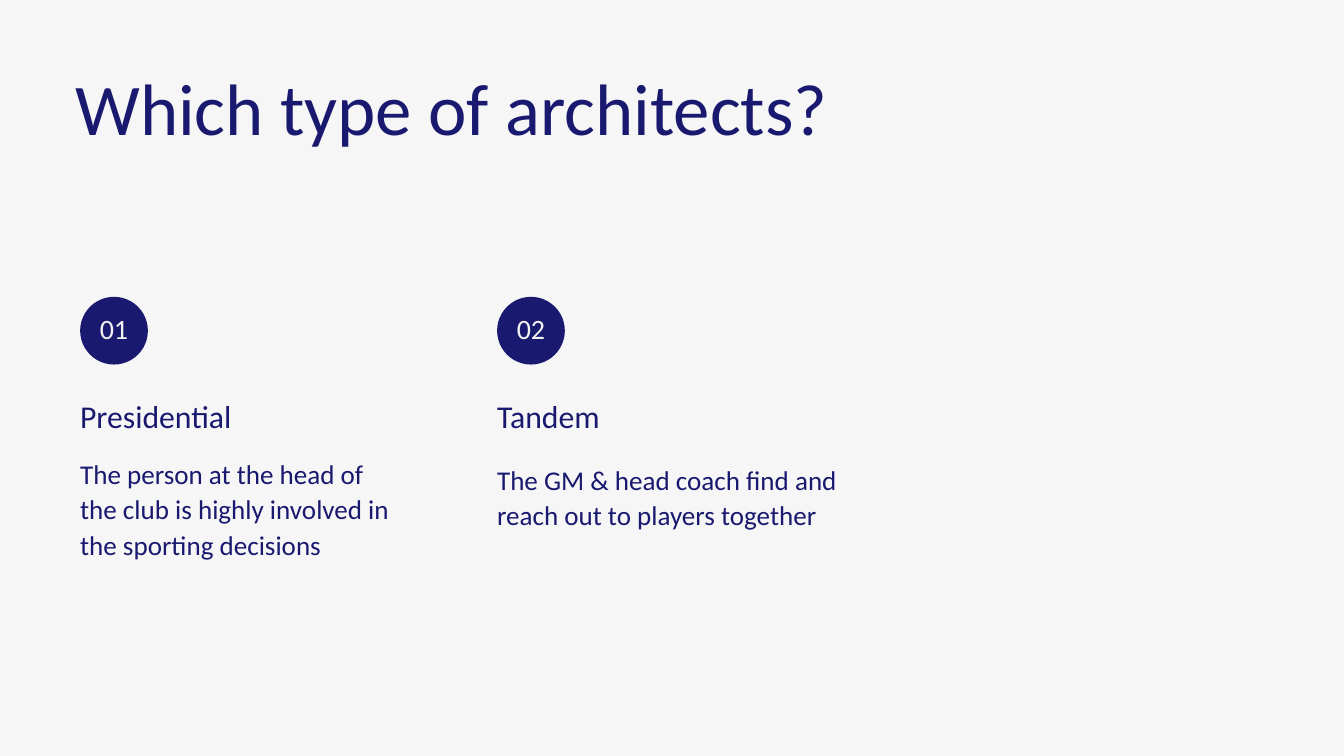
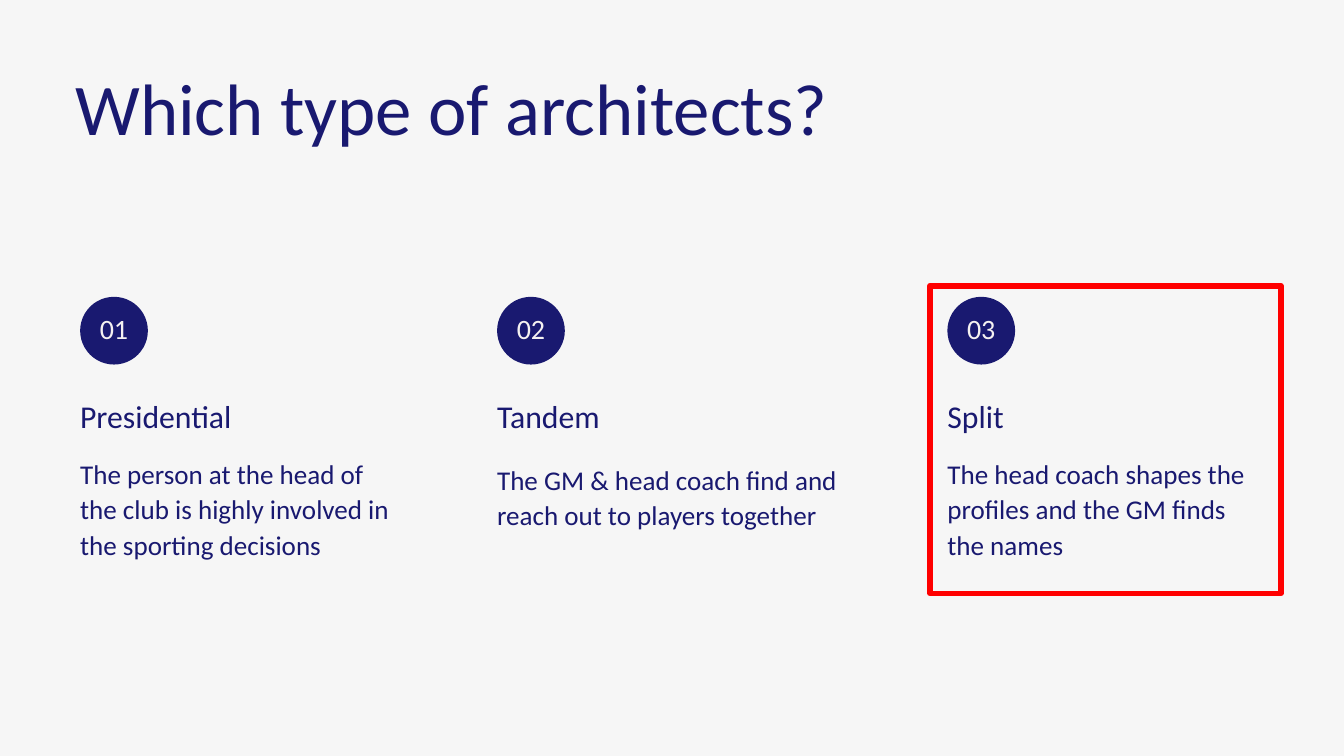
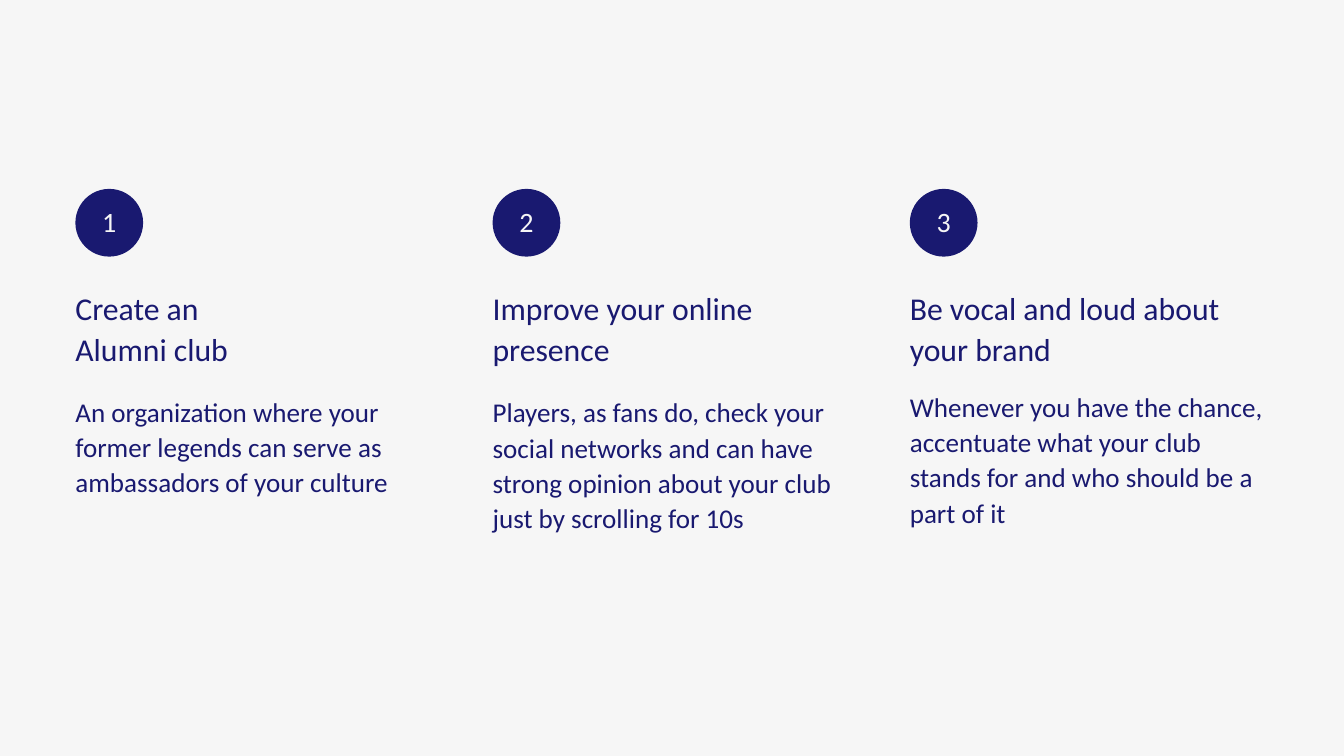
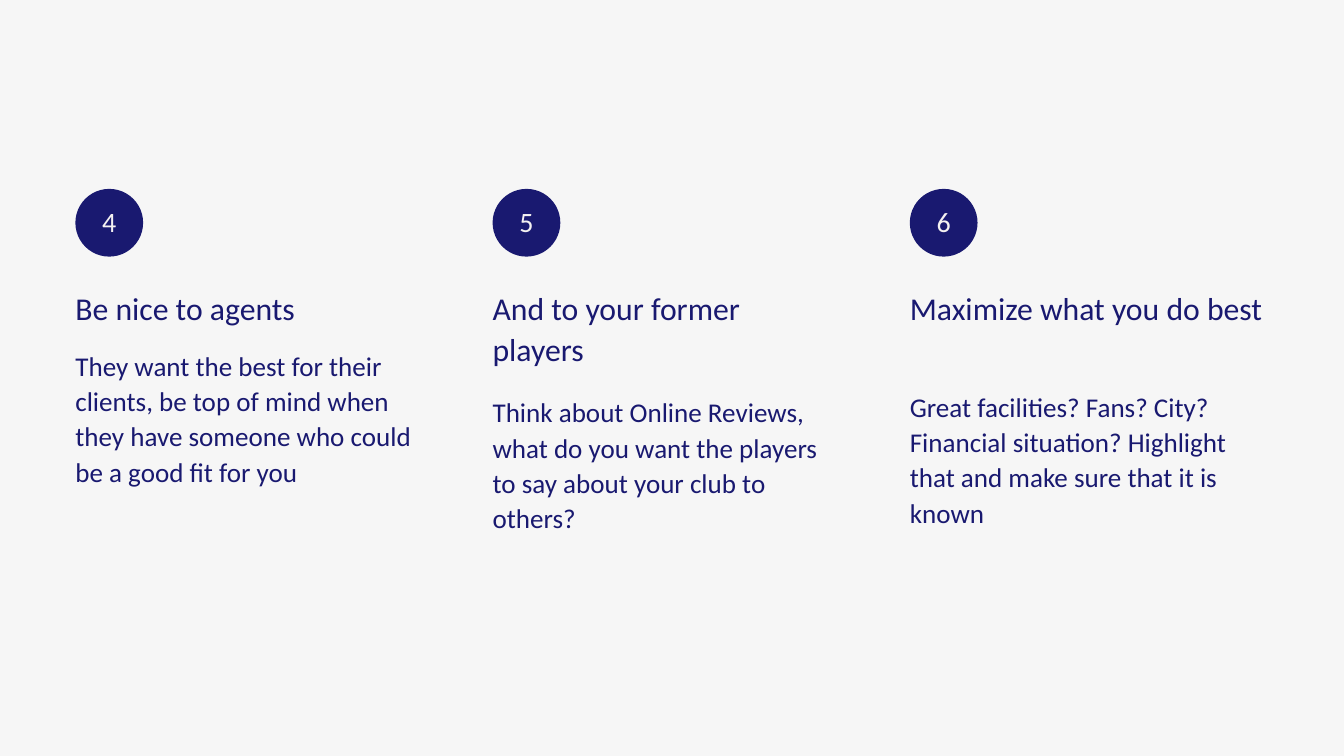
from dataclasses import dataclass

from pptx import Presentation
from pptx.dml.color import RGBColor
from pptx.enum.shapes import MSO_SHAPE
from pptx.enum.text import MSO_AUTO_SIZE, PP_ALIGN
from pptx.util import Cm, Pt

OVAL, RECTANGLE = MSO_SHAPE.OVAL, MSO_SHAPE.RECTANGLE
GROW = MSO_AUTO_SIZE.SHAPE_TO_FIT_TEXT
LEFT, CENTER = PP_ALIGN.LEFT, PP_ALIGN.CENTER

NAVY = RGBColor(0x19, 0x19, 0x70)
PAPER = RGBColor(0xF6, 0xF6, 0xF6)
PALE = RGBColor(0xF4, 0xF1, 0xF1)
RED = RGBColor(0xFF, 0x00, 0x00)
FONT = "Calibri"

# Lengths in centimetres
SLIDE_WIDTH = 50.8
MARGIN = 2.85
BADGE_SIZE = 2.56
HEADING_DROP = 3.65
HEADING_LINE = 1.5
BODY_LINE = 1.32
ARCHITECTS_TOP = 11.22
ADVICE_TOP = 7.14
ADVICE_STEP = 15.77


@dataclass(frozen=True)
class Column:
    number: str
    heading: str
    body: str
    left: float
    width: float
    body_drop: float  # from the top of the badge to the body text
    body_lines: int
    heading_lines: int = 1


def advice(position: int, number: str, heading: str, body: str, body_drop: float,
           body_lines: int, heading_lines: int = 2) -> Column:
    """Place a piece of advice in the regular three-column grid."""
    width = 13.06 if position == 1 else 13.56
    return Column(number, heading, body, MARGIN + position * ADVICE_STEP, width,
                  body_drop, body_lines, heading_lines)


ARCHITECTS = [
    Column("01", "Presidential",
           "The person at the head of the club is highly involved in the sporting decisions",
           3.03, 11.96, 5.98, 4),
    Column("02", "Tandem", "The GM & head coach find and reach out to players together",
           18.79, 13.56, 6.2, 3),
    Column("03", "Split", "The head coach shapes the profiles and the GM finds the names",
           35.81, 11.96, 5.98, 3),
]
FIRST_ADVICE = [
    advice(0, "1", "Create an\nAlumni club",
           "An organization where your former legends can serve as ambassadors of your culture",
           7.7, 4),
    advice(1, "2", "Improve your online presence",
           "Players, as fans do, check your social networks and can have strong opinion "
           "about your club just by scrolling for 10s", 7.72, 5),
    advice(2, "3", "Be vocal and loud about your brand",
           "Whenever you have the chance, accentuate what your club stands for and who "
           "should be a part of it", 7.52, 4),
]
MORE_ADVICE = [
    advice(0, "4", "Be nice to agents",
           "They want the best for their clients, be top of mind when they have someone "
           "who could be a good fit for you", 5.97, 5, heading_lines=1),
    advice(1, "5", "And to your former players",
           "Think about Online Reviews, what do you want the players to say about your "
           "club to others?", 7.72, 5),
    advice(2, "6", "Maximize what you do best",
           "Great facilities? Fans? City? Financial situation? Highlight that and make "
           "sure that it is known", 7.52, 4),
]


def add_text(page, text: str, left: float, top: float, width: float, height: float, *,
             size: float, spacing: float, color: RGBColor = NAVY,
             align: PP_ALIGN = LEFT) -> None:
    """Add a box without insets; each line of the text is a paragraph."""
    box = page.shapes.add_textbox(Cm(left), Cm(top), Cm(width), Cm(height))
    frame = box.text_frame
    frame.margin_left = frame.margin_right = frame.margin_top = frame.margin_bottom = 0
    frame.word_wrap = True
    frame.auto_size = GROW
    frame.text = text
    for para in frame.paragraphs:
        para.alignment = align
        para.line_spacing = Pt(spacing)
        for span in para.runs:
            span.font.name = FONT
            span.font.size = Pt(size)
            span.font.color.rgb = color


def add_badge(page, number: str, left: float, top: float, color: RGBColor) -> None:
    circle = page.shapes.add_shape(OVAL, Cm(left), Cm(top), Cm(BADGE_SIZE), Cm(BADGE_SIZE))
    circle.shadow.inherit = False
    circle.fill.solid()
    circle.fill.fore_color.rgb = NAVY
    circle.line.fill.background()
    add_text(page, number, left + 0.39, top + 0.68, 1.78, 1.22,
             size=30, spacing=33, color=color, align=CENTER)


def add_column(page, column: Column, top: float, number_color: RGBColor) -> None:
    add_text(page, column.body, column.left, top + column.body_drop, column.width,
             column.body_lines * BODY_LINE, size=29, spacing=37.7)
    add_text(page, column.heading, column.left, top + HEADING_DROP, column.width,
             column.heading_lines * HEADING_LINE, size=34, spacing=44.2)
    add_badge(page, column.number, column.left, top, number_color)


def add_highlight(page) -> None:
    frame = page.shapes.add_shape(RECTANGLE, Cm(35.15), Cm(10.8), Cm(13.26), Cm(11.63))
    frame.shadow.inherit = False
    frame.fill.background()
    frame.line.color.rgb = RED
    frame.line.width = Pt(6)


def add_page(deck, columns: list[Column], top: float, title: str = "",
             number_color: RGBColor = PALE):
    page = deck.slides.add_slide(deck.slide_layouts[6])
    page.background.fill.solid()
    page.background.fill.fore_color.rgb = PAPER
    if title:
        add_text(page, title, MARGIN, 2.64, 39.55, 3.05, size=78, spacing=85.8)
    for column in columns:
        add_column(page, column, top, number_color)
    return page


def main() -> None:
    deck = Presentation()
    deck.slide_width = Cm(SLIDE_WIDTH)
    deck.slide_height = Cm(SLIDE_WIDTH * 9 / 16)

    question = "Which type of architects?"
    add_page(deck, ARCHITECTS[:2], ARCHITECTS_TOP, question)
    add_highlight(add_page(deck, ARCHITECTS, ARCHITECTS_TOP, question))
    add_page(deck, FIRST_ADVICE, ADVICE_TOP, number_color=PAPER)
    add_page(deck, MORE_ADVICE, ADVICE_TOP)
    deck.save("out.pptx")


if __name__ == "__main__":
    main()
